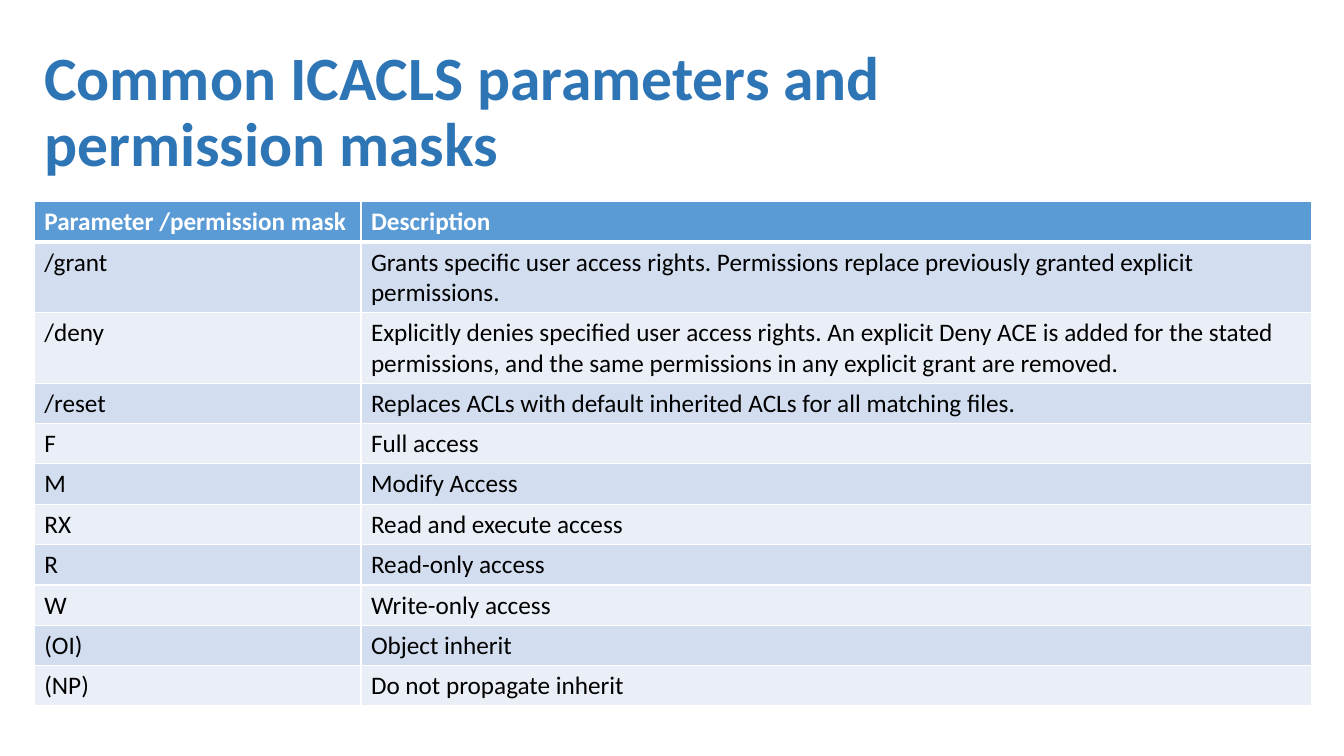
from lxml import etree
from pptx import Presentation
from pptx import util as u
from pptx.dml import color
from pptx.enum import text
from pptx.oxml import ns

FONT = "Calibri"
ROWS = [
    ("Parameter /permission mask", "Description"),
    ("/grant", "Grants specific user access rights. Permissions replace "
     "previously granted explicit permissions."),
    ("/deny", "Explicitly denies specified user access rights. An explicit "
     "Deny ACE is added for the stated permissions, and the same permissions "
     "in any explicit grant are removed."),
    ("/reset", "Replaces ACLs with default inherited ACLs for all matching files."),
    ("F", "Full access"),
    ("M", "Modify Access"),
    ("RX", "Read and execute access"),
    ("R", "Read-only access"),
    ("W", "Write-only access"),
    ("(OI)", "Object inherit"),
    ("(NP)", "Do not propagate inherit"),
]


def rgb(code):
    """Turn a hex string into a colour."""
    return color.RGBColor.from_string(code)


def style(para, size, code, bold):
    """Set the font of a paragraph."""
    font = para.font
    font.name, font.size, font.bold = FONT, u.Pt(size), bold
    font.color.rgb = rgb(code)


def border(cell, widths, code="FFFFFF"):
    """Draw the left, right, top and bottom lines of a cell."""
    props = cell._tc.get_or_add_tcPr()
    for i, (side, width) in enumerate(zip("LRTB", widths)):
        line = etree.Element(ns.qn(f"a:ln{side}"), w=str(u.Pt(width)))
        fill = etree.SubElement(line, ns.qn("a:solidFill"))
        etree.SubElement(fill, ns.qn("a:srgbClr"), val=code)
        props.insert(i, line)


def title(slide, words):
    """Add the slide title."""
    box = slide.shapes.add_textbox(
        u.Inches(0.34), u.Inches(0.4), u.Inches(12.68), u.Inches(1.45))
    frame = box.text_frame
    frame.word_wrap = True
    frame.vertical_anchor = text.MSO_ANCHOR.MIDDLE
    para = frame.paragraphs[0]
    para.text = words
    para.line_spacing = 0.9
    style(para, 44, "2E75B6", True)


def table(slide, rows, widths, height):
    """Add a banded table with a header row."""
    grid = slide.shapes.add_table(
        len(rows), len(widths), u.Inches(0.34), u.Inches(2),
        u.Inches(sum(widths)), u.Inches(height * len(rows))).table
    for col, width in zip(grid.columns, widths):
        col.width = u.Inches(width)
    for r, row in enumerate(rows):
        head = r == 0
        shade = "5B9BD5" if head else ("EAEFF7", "D2DEEF")[r % 2]
        for c, words in enumerate(row):
            cell = grid.cell(r, c)
            cell.text = words
            cell.fill.solid()
            cell.fill.fore_color.rgb = rgb(shade)
            border(cell, (1, 1, 3 if r == 1 else 1, 3 if head else 1))
            style(cell.text_frame.paragraphs[0], 18,
                  "FFFFFF" if head else "000000", head)


def main():
    """Build and save the slide."""
    deck = Presentation()
    deck.slide_width, deck.slide_height = u.Inches(13.33), u.Inches(7.5)
    slide = deck.slides.add_slide(deck.slide_layouts[6])
    title(slide, "Common ICACLS parameters and \vpermission masks")
    table(slide, ROWS, (3.24, 9.43), 0.4)
    deck.save("out.pptx")


if __name__ == "__main__":
    main()
